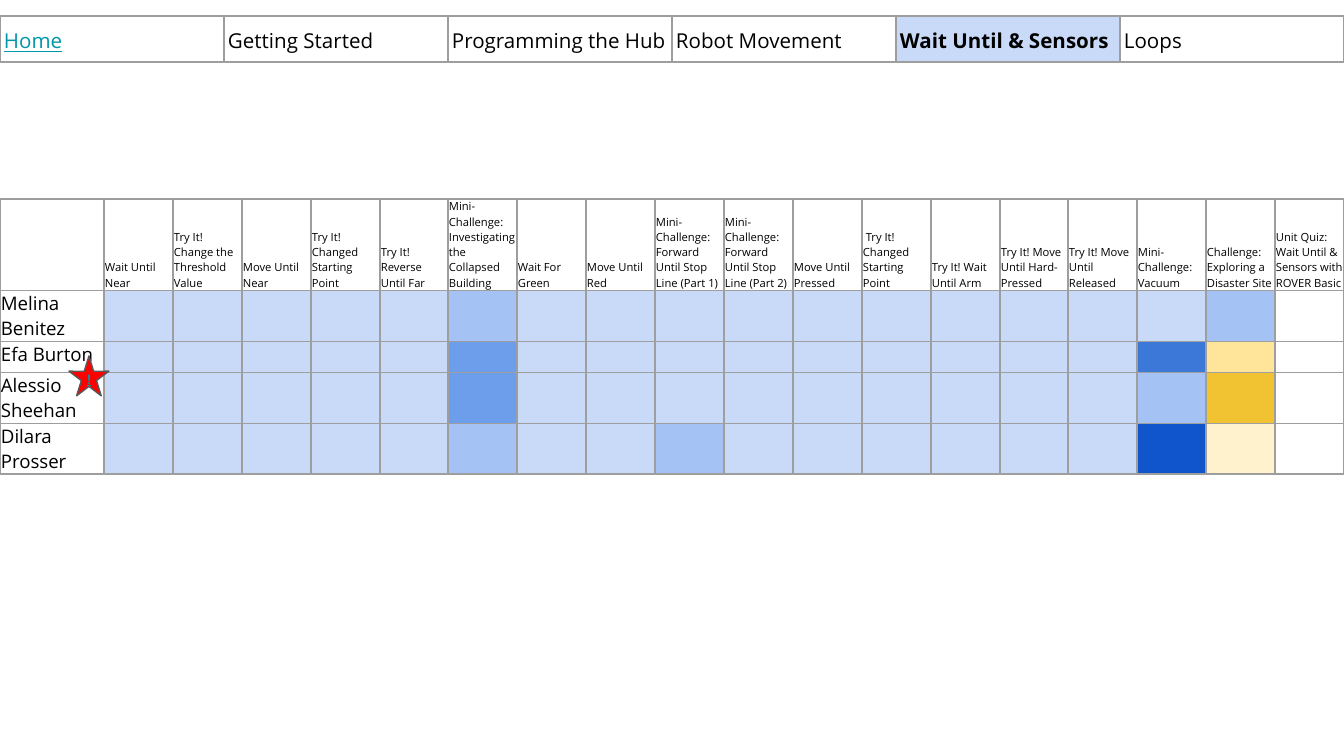
from pptx import Presentation
from pptx.dml.color import RGBColor
from pptx.enum.shapes import MSO_SHAPE
from pptx.enum.text import MSO_ANCHOR, PP_ALIGN
from pptx.oxml.ns import qn
from lxml.etree import SubElement

SCALE = 914400 / 134.4
WIDE, HIGH = 1344, 756
HEX = {
    "black": "000000", "teal": "0097A7", "grid": "9E9E9E", "edge": "595959",
    "red": "FF0000", "pale": "C9DAF8", "sky": "A4C2F4", "blue": "6D9EEB",
    "deep": "3C78D8", "navy": "1155CC", "cream": "FFF2CC", "sand": "FFE599",
    "gold": "F1C232",
}
TABS = ["Home", "Getting Started", "Programming the Hub", "Robot Movement",
        "Wait Until & Sensors", "Loops"]
TASKS = [
    "Wait Until Near", "Try It! Change the Threshold Value", "Move Until Near",
    "Try It! Changed Starting Point", "Try It! Reverse Until Far",
    "Mini-Challenge: Investigating the Collapsed Building", "Wait For Green",
    "Move Until Red", "Mini-Challenge: Forward Until Stop Line (Part 1)",
    "Mini-Challenge: Forward Until Stop Line (Part 2)", "Move Until Pressed",
    " Try It! Changed Starting Point", "Try It! Wait Until Arm",
    "Try It! Move Until Hard-Pressed", "Try It! Move Until Released",
    "Mini-Challenge: Vacuum", "Challenge: Exploring a Disaster Site",
    "Unit Quiz: Wait Until & Sensors with ROVER Basic",
]
PUPILS = [
    ("Melina Benitez", {6: "sky", 17: "sky"}),
    ("Efa Burton", {6: "blue", 16: "deep", 17: "sand"}),
    ("Alessio Sheehan", {6: "blue", 16: "sky", 17: "gold"}),
    ("Dilara Prosser", {6: "sky", 9: "sky", 16: "navy", 17: "cream"}),
]


def px(size):
    return round(size * SCALE)


def tint(name):
    return RGBColor.from_string(HEX[name])


def split(total, count):
    marks = [round(total * i / count) for i in range(count + 1)]
    return [end - start for start, end in zip(marks, marks[1:])]


def assign(item, values):
    for name, value in values.items():
        setattr(item, name, value)


def style(run, size, color="black", face="Open Sans", **extra):
    assign(run.font, {"size": round(size * 12700), "name": face, **extra})
    run.font.color.rgb = tint(color)


def border(cell):
    props = cell._tc.get_or_add_tcPr()
    for side in ("a:lnL", "a:lnR", "a:lnT", "a:lnB"):
        line = SubElement(props, qn(side), w="9525")
        fill = SubElement(line, qn("a:solidFill"))
        SubElement(fill, qn("a:srgbClr"), val=HEX["grid"])


def inset(box, side, edge):
    assign(box, {"margin_left": px(side), "margin_right": px(side),
                 "margin_top": px(edge), "margin_bottom": px(edge)})


def grid(slide, top, cols, rows, side, edge):
    frame = slide.shapes.add_table(len(rows), len(cols), 0, px(top),
                                   px(sum(cols)), px(sum(rows)))
    table = frame.table
    assign(table, {"first_row": False, "horz_banding": False})
    for col, size in zip(table.columns, cols):
        col.width = px(size)
    for row, size in zip(table.rows, rows):
        row.height = px(size)
    for cell in table.iter_cells():
        inset(cell, side, edge)
        border(cell)
        cell.fill.background()
        cell.text_frame.paragraphs[0]._p.get_or_add_endParaRPr().set("sz", "600")
    return table


def paint(item, color):
    item.fill.solid()
    item.fill.fore_color.rgb = tint(color)


def write(cell, text, size, anchor, **font):
    cell.vertical_anchor = anchor
    run = cell.text_frame.paragraphs[0].add_run()
    run.text = text
    style(run, size, **font)


def scores(slide):
    cols = [104] + split(WIDE - 104, len(TASKS))
    table = grid(slide, 199, cols, [91, 51, 31, 51, 50], 1, 0)
    for col, task in enumerate(TASKS, 1):
        write(table.cell(0, col), task, 6, MSO_ANCHOR.BOTTOM)
    for row, (name, marks) in enumerate(PUPILS, 1):
        write(table.cell(row, 0), name, 10, MSO_ANCHOR.TOP)
        for col in range(1, len(TASKS)):
            paint(table.cell(row, col), marks.get(col, "pale"))


def tabs(slide):
    table = grid(slide, 16, split(WIDE, len(TABS)), [46], 4, 7)
    looks = {"Home": {"color": "teal", "underline": True},
             "Wait Until & Sensors": {"bold": True}}
    for col, text in enumerate(TABS):
        write(table.cell(0, col), text, 11, MSO_ANCHOR.BOTTOM,
              **looks.get(text, {}))
    paint(table.cell(0, TABS.index("Wait Until & Sensors")), "pale")


def star(slide):
    shape = slide.shapes.add_shape(MSO_SHAPE.STAR_5_POINT, px(69), px(356),
                                   px(40), px(40))
    shape.shadow.inherit = False
    shape.adjustments[0] = 0.19
    paint(shape, "red")
    shape.line.color.rgb = tint("edge")
    shape.line.width = 9525
    frame = shape.text_frame
    inset(frame, 0, 0)
    frame.vertical_anchor = MSO_ANCHOR.MIDDLE
    para = frame.paragraphs[0]
    para.alignment = PP_ALIGN.CENTER
    run = para.add_run()
    run.text = "!"
    style(run, 7, "teal", "Roboto Condensed", bold=True, underline=True)


def main():
    deck = Presentation()
    assign(deck, {"slide_width": px(WIDE), "slide_height": px(HIGH)})
    slide = deck.slides.add_slide(deck.slide_layouts[6])
    scores(slide)
    tabs(slide)
    star(slide)
    deck.save("out.pptx")


if __name__ == "__main__":
    main()
